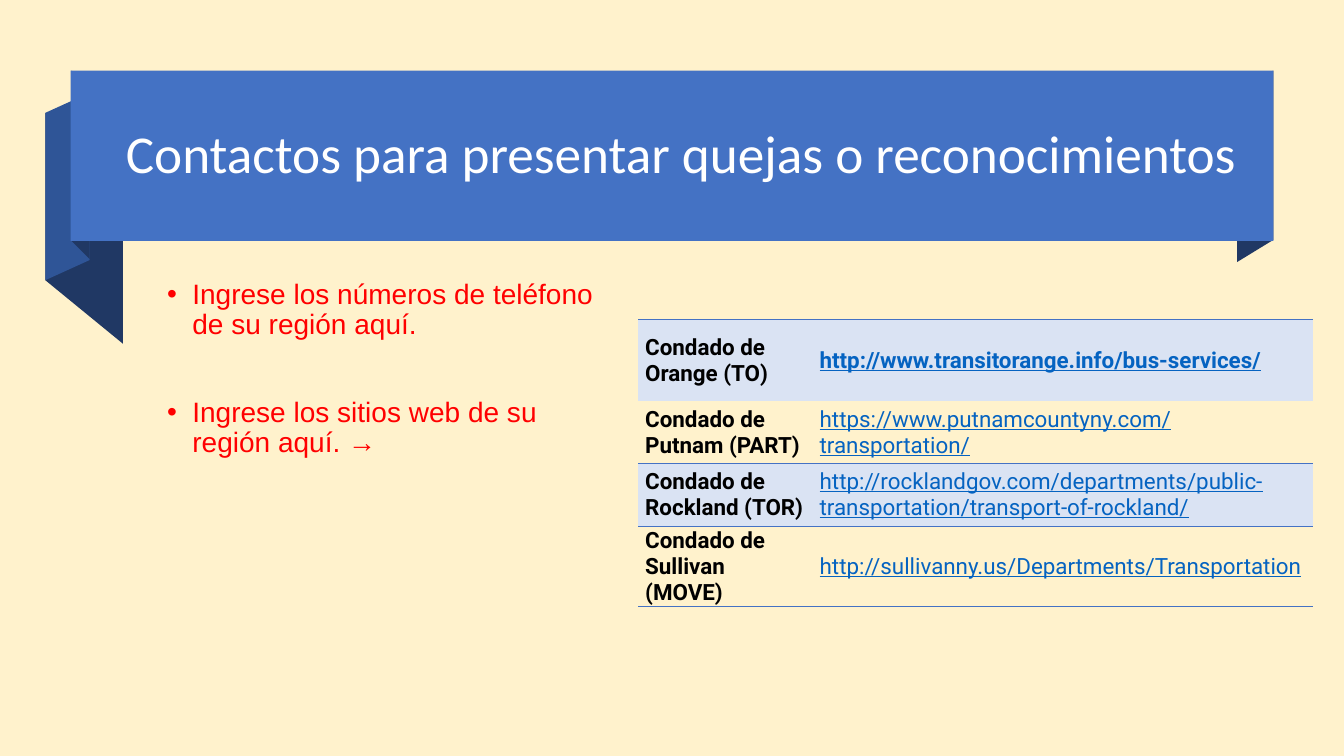
from dataclasses import dataclass

from lxml import etree
from pptx import Presentation
from pptx import util as u
from pptx.dml.color import RGBColor
from pptx.enum import shapes, text
from pptx.oxml import ns

COLORS = {
    "cream": "FFF2CC",
    "navy": "203864",
    "mid_blue": "2F5597",
    "blue": "4472C4",
    "band": "DAE3F3",
    "link": "0563C1",
    "red": "FF0000",
    "white": "FFFFFF",
    "black": "000000",
}
NO_STYLE_NO_GRID = "{2D5ABB26-0587-4C30-8999-92F81FD0307C}"


@dataclass(frozen=True)
class Fold:
    """A vertical-sided piece of ribbon: two x positions, (top, bottom) at each."""
    left: float
    right: float
    left_span: tuple[float, float]
    right_span: tuple[float, float]
    color: str


@dataclass(frozen=True)
class County:
    name: str
    site: str
    height: float = 0.62
    bold_site: bool = False
    banded: bool = False
    top_line: float = 0
    bottom_line: float = 0


FOLDS = [
    Fold(12.27, 12.63, (0.91, 2.6), (0.7, 2.38), "navy"),
    Fold(0.45, 1.22, (1.12, 2.78), (1.75, 3.41), "navy"),
    Fold(0.45, 0.89, (1.12, 2.78), (0.92, 2.58), "mid_blue"),
    Fold(0.71, 0.89, (0.7, 2.39), (0.89, 2.57), "navy"),
]
COUNTIES = [
    County("Condado de Orange (TO)", "http://www.transitorange.info/bus-services/",
           height=0.81, bold_site=True, banded=True, top_line=1.5),
    County("Condado de Putnam (PART)", "https://www.putnamcountyny.com/transportation/"),
    County("Condado de Rockland (TOR)",
           "http://rocklandgov.com/departments/public-transportation/transport-of-rockland/",
           banded=True, top_line=0.75, bottom_line=0),
    County("Condado de Sullivan (MOVE)", "http://sullivanny.us/Departments/Transportation",
           bottom_line=0.75),
]
INSTRUCTIONS = [
    ("Ingrese los números de teléfono de su región aquí.", 0),
    ("Ingrese los sitios web de su región aquí. →", 41),
]


def rgb(color: str) -> RGBColor:
    return RGBColor.from_string(COLORS[color])


def paint(shape, color: str) -> None:
    shape.shadow.inherit = False
    shape.fill.solid()
    shape.fill.fore_color.rgb = rgb(color)
    shape.line.fill.background()


def write(paragraph, words: str, *, font: str, size: float, color: str,
          bold: bool = False, underline: bool = False, line_spacing: float = 1.0,
          space_before: float = 0) -> None:
    paragraph.line_spacing = line_spacing
    paragraph.space_before = u.Pt(space_before)
    run = paragraph.add_run()
    run.text = words
    run.font.name = font
    run.font.size = u.Pt(size)
    run.font.bold = bold
    run.font.underline = underline
    run.font.color.rgb = rgb(color)


def add_bullet(paragraph) -> None:
    properties = paragraph._p.get_or_add_pPr()
    properties.set("marL", str(u.Inches(0.25)))
    properties.set("indent", str(u.Inches(-0.25)))
    etree.SubElement(properties, ns.qn("a:buFont"), typeface="Arial")
    etree.SubElement(properties, ns.qn("a:buChar"), char="•")


def add_fold(slide, fold: Fold) -> None:
    corners = [(fold.left, fold.left_span[0]), (fold.right, fold.right_span[0]),
               (fold.right, fold.right_span[1]), (fold.left, fold.left_span[1])]
    start, *others = [(u.Inches(x), u.Inches(y)) for x, y in corners]
    outline = slide.shapes.build_freeform(*start)
    outline.add_line_segments(others, close=True)
    paint(outline.convert_to_shape(), fold.color)


def add_frame(slide, left: float, top: float, width: float, height: float):
    box = slide.shapes.add_textbox(u.Inches(left), u.Inches(top),
                                   u.Inches(width), u.Inches(height))
    box.text_frame.word_wrap = True
    return box.text_frame


def add_border(cell, side: str, points: float) -> None:
    line = etree.SubElement(cell._tc.get_or_add_tcPr(), ns.qn(f"a:{side}"),
                            w=str(u.Pt(points)))
    fill = etree.SubElement(line, ns.qn("a:solidFill"))
    etree.SubElement(fill, ns.qn("a:srgbClr"), val=COLORS["blue"])


def format_cell(cell, county: County) -> None:
    """Set borders first, since the schema puts them ahead of the fill."""
    for side, points in (("lnT", county.top_line), ("lnB", county.bottom_line)):
        if points:
            add_border(cell, side, points)
    if county.banded:
        cell.fill.solid()
        cell.fill.fore_color.rgb = rgb("band")
    else:
        cell.fill.background()
    cell.vertical_anchor = text.MSO_ANCHOR.MIDDLE
    cell.margin_left = cell.margin_right = u.Inches(0.07)
    cell.margin_top = cell.margin_bottom = 0


def add_contacts(slide) -> None:
    frame = slide.shapes.add_table(len(COUNTIES), 2, u.Inches(6.33), u.Inches(3.17),
                                   u.Inches(6.69), u.Inches(2.67))
    contacts = frame.table
    contacts.first_row = contacts.horz_banding = False
    contacts._tbl.tblPr.find(ns.qn("a:tableStyleId")).text = NO_STYLE_NO_GRID
    for column, width in zip(contacts.columns, (1.73, 4.96)):
        column.width = u.Inches(width)
    for row, county in zip(contacts.rows, COUNTIES):
        row.height = u.Inches(county.height)
        name, site = row.cells
        for cell in (name, site):
            format_cell(cell, county)
        write(name.text_frame.paragraphs[0], county.name, font="Roboto", size=16,
              color="black", bold=True)
        write(site.text_frame.paragraphs[0], county.site, font="Roboto", size=16,
              color="link", bold=county.bold_site, underline=True)


def main() -> None:
    deck = Presentation()
    deck.slide_width, deck.slide_height = u.Inches(13.33), u.Inches(7.5)
    slide = deck.slides.add_slide(deck.slide_layouts[6])
    slide.background.fill.solid()
    slide.background.fill.fore_color.rgb = rgb("cream")

    for fold in FOLDS:
        add_fold(slide, fold)
    banner = slide.shapes.add_shape(shapes.MSO_SHAPE.RECTANGLE, u.Inches(0.7), u.Inches(0.7),
                                    u.Inches(11.93), u.Inches(1.69))
    paint(banner, "blue")

    title = add_frame(slide, 1.15, 0.83, 11.46, 1.45)
    title.vertical_anchor = text.MSO_ANCHOR.MIDDLE
    write(title.paragraphs[0], "Contactos para presentar quejas o reconocimientos",
          font="Calibri", size=38, color="white", line_spacing=0.9)

    body = add_frame(slide, 1.56, 2.73, 4.43, 3.9)
    for index, (instruction, gap) in enumerate(INSTRUCTIONS):
        paragraph = body.add_paragraph() if index else body.paragraphs[0]
        write(paragraph, instruction, font="Arial", size=20, color="red",
              line_spacing=0.9, space_before=gap)
        add_bullet(paragraph)

    add_contacts(slide)
    deck.save("out.pptx")


if __name__ == "__main__":
    main()
